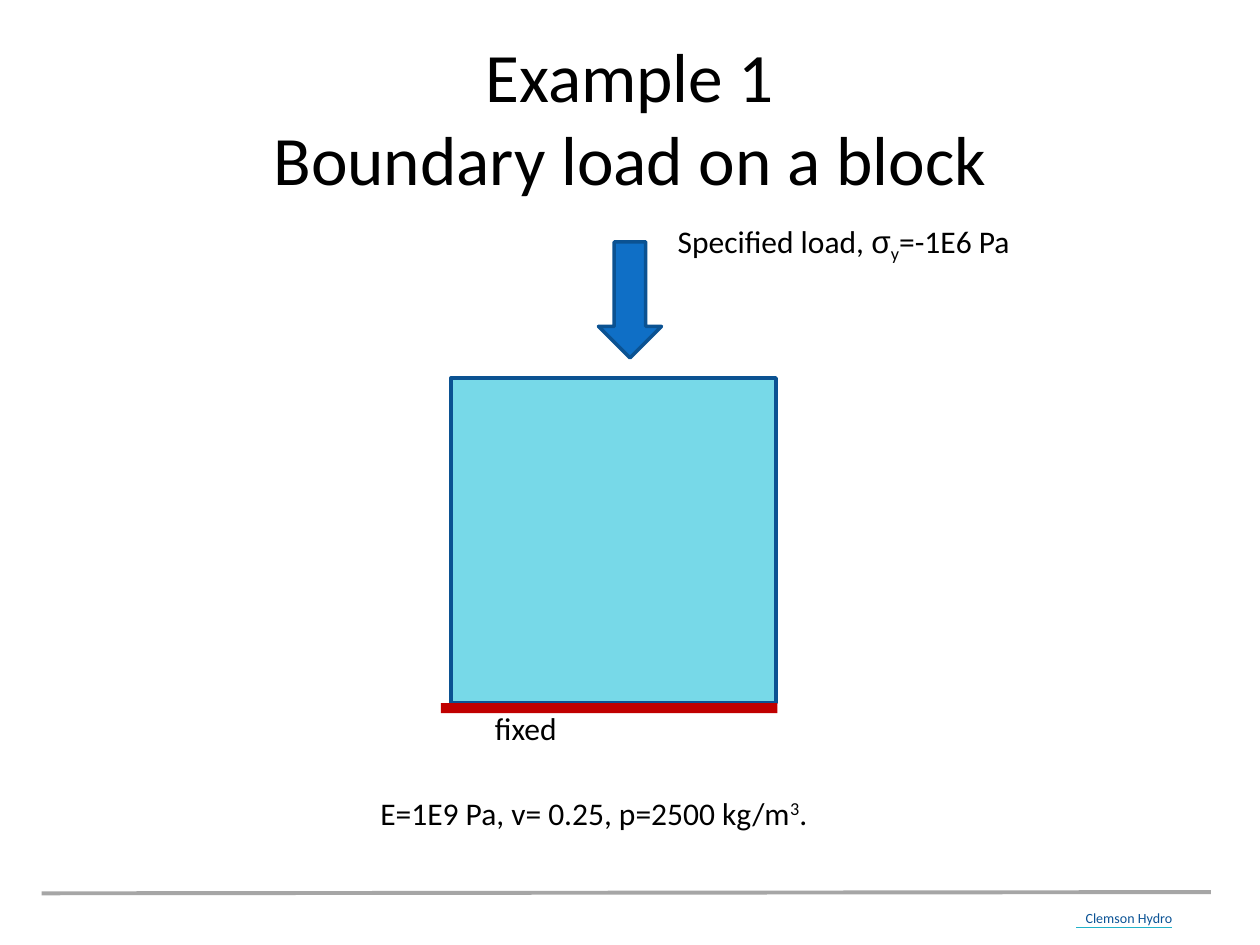
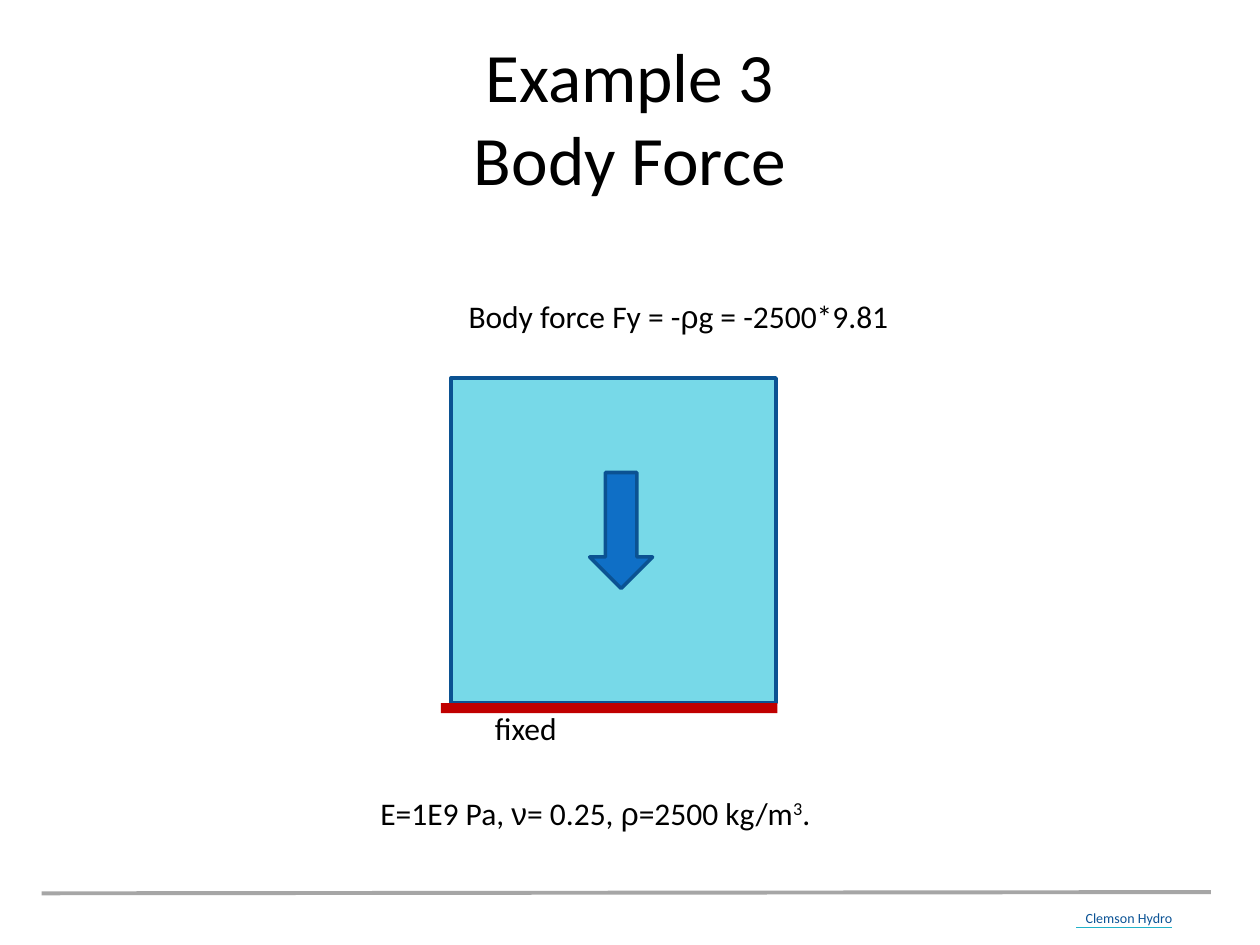
from collections import namedtuple

from lxml import etree
from pptx import Presentation
from pptx.dml.color import RGBColor
from pptx.enum.shapes import MSO_CONNECTOR, MSO_SHAPE
from pptx.enum.text import MSO_ANCHOR, MSO_AUTO_SIZE, PP_ALIGN
from pptx.oxml.ns import qn
from pptx.util import Inches, Pt

RECTANGLE = MSO_SHAPE.RECTANGLE
DOWN_ARROW = MSO_SHAPE.DOWN_ARROW
STRAIGHT = MSO_CONNECTOR.STRAIGHT
MIDDLE = MSO_ANCHOR.MIDDLE
NO_AUTOFIT = MSO_AUTO_SIZE.NONE
LEFT, CENTER = PP_ALIGN.LEFT, PP_ALIGN.CENTER

BLACK = RGBColor(0x00, 0x00, 0x00)
GREY = RGBColor(0xA6, 0xA6, 0xA6)
TEAL = RGBColor(0x21, 0xB2, 0xC9)
LINK_BLUE = RGBColor(0x0B, 0x53, 0x95)
OUTLINE_BLUE = RGBColor(0x0B, 0x52, 0x92)
ARROW_BLUE = RGBColor(0x0F, 0x6F, 0xC6)
BLOCK_CYAN = RGBColor(0x77, 0xD9, 0xE8)
FIXED_RED = RGBColor(0xC0, 0x00, 0x00)

LATIN, GREEK = "Calibri", "Arial"
TITLE_SIZE = 39.6
LABEL_FORMAT = {"name": LATIN, "size": Pt(18)}
FOOTER_FORMAT = {"name": LATIN, "size": Pt(8)}
SUPERSCRIPT, SUBSCRIPT = 30000, -25000

Box = namedtuple("Box", "left top width height")
Piece = namedtuple("Piece", "text font baseline", defaults=(LATIN, 0))

TITLE_BOX = Box(0.5, 0.3, 9, 1.25)
FOOTER_BOX = Box(0.33, 7.08, 9.28, 0.33)
MODEL_BOX = Box(3.5, 3, 2.67, 2.66)
PROPERTIES_BOX = Box(2.92, 6.25, 5.5, 0.4)

EXAMPLES = [
    {
        "title": "Example 1\vBoundary load on a block",
        "arrow": Box(4.75, 1.92, 0.5, 0.92),
        "properties": [
            Piece("E=1E9 Pa, v= 0.25, p=2500 kg/m"),
            Piece("3", baseline=SUPERSCRIPT),
            Piece("."),
        ],
        "load_box": Box(5.28, 1.71, 3.42, 0.4),
        "load": [
            Piece("Specified load, "),
            Piece("σ", GREEK),
            Piece("y", baseline=SUBSCRIPT),
            Piece("=-1E6 Pa"),
        ],
    },
    {
        "title": "Example 3\vBody Force",
        "arrow": Box(4.68, 3.75, 0.5, 0.92),
        "properties": [
            Piece("E=1E9 Pa, "),
            Piece("ν", GREEK),
            Piece("= 0.25, "),
            Piece("ρ", GREEK),
            Piece("=2500 kg/m"),
            Piece("3", baseline=SUPERSCRIPT),
            Piece("."),
        ],
        "load_box": Box(3.62, 2.31, 3.75, 0.4),
        "load": [
            Piece("Body force Fy = -"),
            Piece("ρ", GREEK),
            Piece("g = -2500*9.81"),
        ],
    },
]


def inches(box):
    """Return the four lengths of a box in slide units."""
    return [Inches(length) for length in box]


def add_label(slide, box, pieces, font_format=LABEL_FORMAT, color=BLACK, align=LEFT):
    """Add a text box whose pieces may differ in font and baseline."""
    frame = slide.shapes.add_textbox(*inches(box)).text_frame
    frame.word_wrap = True
    paragraph = frame.paragraphs[0]
    paragraph.alignment = align
    for piece in pieces:
        run = paragraph.add_run()
        run.text = piece.text
        for attribute, value in {**font_format, "name": piece.font}.items():
            setattr(run.font, attribute, value)
        run.font.color.rgb = color
        if piece.baseline:
            run._r.get_or_add_rPr().set("baseline", str(piece.baseline))


def add_solid(slide, preset, box, fill, outline=None):
    """Add a filled preset shape, outlined when a colour is given."""
    solid = slide.shapes.add_shape(preset, *inches(box))
    solid.shadow.inherit = False
    solid.fill.solid()
    solid.fill.fore_color.rgb = fill
    if outline is None:
        solid.line.fill.background()
    else:
        solid.line.color.rgb = outline
        solid.line.width = Pt(2)


def add_rule(slide, start, end, color, width):
    """Add a straight line without a shadow."""
    rule = slide.shapes.add_connector(STRAIGHT, *inches(start + end))
    rule.line.color.rgb = color
    rule.line.width = Pt(width)
    etree.SubElement(rule._element.spPr, qn("a:effectLst"))


def add_footer(slide, box):
    """Add the bottom rule and the underlined group name."""
    right = box.left + box.width
    add_rule(slide, (box.left, box.top + 0.01), (right, box.top), GREY, 2.25)
    name_box = Box(right - 1.11, box.top + 0.09, 0.92, 0.24)
    add_label(slide, name_box, [Piece("Clemson Hydro")], FOOTER_FORMAT, LINK_BLUE, CENTER)
    underline = box.top + 0.28
    add_rule(slide, (right - 1.07, underline), (right - 0.31, underline), TEAL, 0.75)


def add_title(slide, box, wording):
    """Place and fill the title placeholder."""
    title = slide.shapes.title
    title.left, title.top, title.width, title.height = inches(box)
    frame = title.text_frame
    frame.text = wording
    frame.auto_size = NO_AUTOFIT
    frame.vertical_anchor = MIDDLE
    frame.paragraphs[0].alignment = CENTER
    for run in frame.paragraphs[0].runs:
        run.font.name = LATIN
        run.font.color.rgb = BLACK


def add_fixed_block(slide, box):
    """Add the block on its fixed base, with the label of the base."""
    base_height = 0.08
    side = box.height - base_height
    base_top = box.top + side
    add_solid(slide, RECTANGLE, Box(box.left + base_height, box.top, side, side),
              BLOCK_CYAN, OUTLINE_BLUE)
    add_solid(slide, RECTANGLE, Box(box.left, base_top, box.width, base_height), FIXED_RED)
    add_label(slide, Box(box.left + 0.33, base_top, 1.67, 0.4), [Piece("fixed")])


def add_example(prs, example):
    """Add one slide showing a loaded block and its properties."""
    slide = prs.slides.add_slide(prs.slide_layouts.get_by_name("Title Only"))
    add_footer(slide, FOOTER_BOX)
    add_title(slide, TITLE_BOX, example["title"])
    add_fixed_block(slide, MODEL_BOX)
    add_solid(slide, DOWN_ARROW, example["arrow"], ARROW_BLUE, OUTLINE_BLUE)
    add_label(slide, PROPERTIES_BOX, example["properties"])
    add_label(slide, example["load_box"], example["load"])


def main():
    """Build and save the presentation."""
    prs = Presentation()
    prs.slide_width, prs.slide_height = Inches(10), Inches(7.5)
    title_style = prs.slide_master.element.find(".//" + qn("p:titleStyle"))
    title_style.find(".//" + qn("a:defRPr")).set("sz", str(round(TITLE_SIZE * 100)))
    for example in EXAMPLES:
        add_example(prs, example)
    prs.save("out.pptx")


if __name__ == "__main__":
    main()
